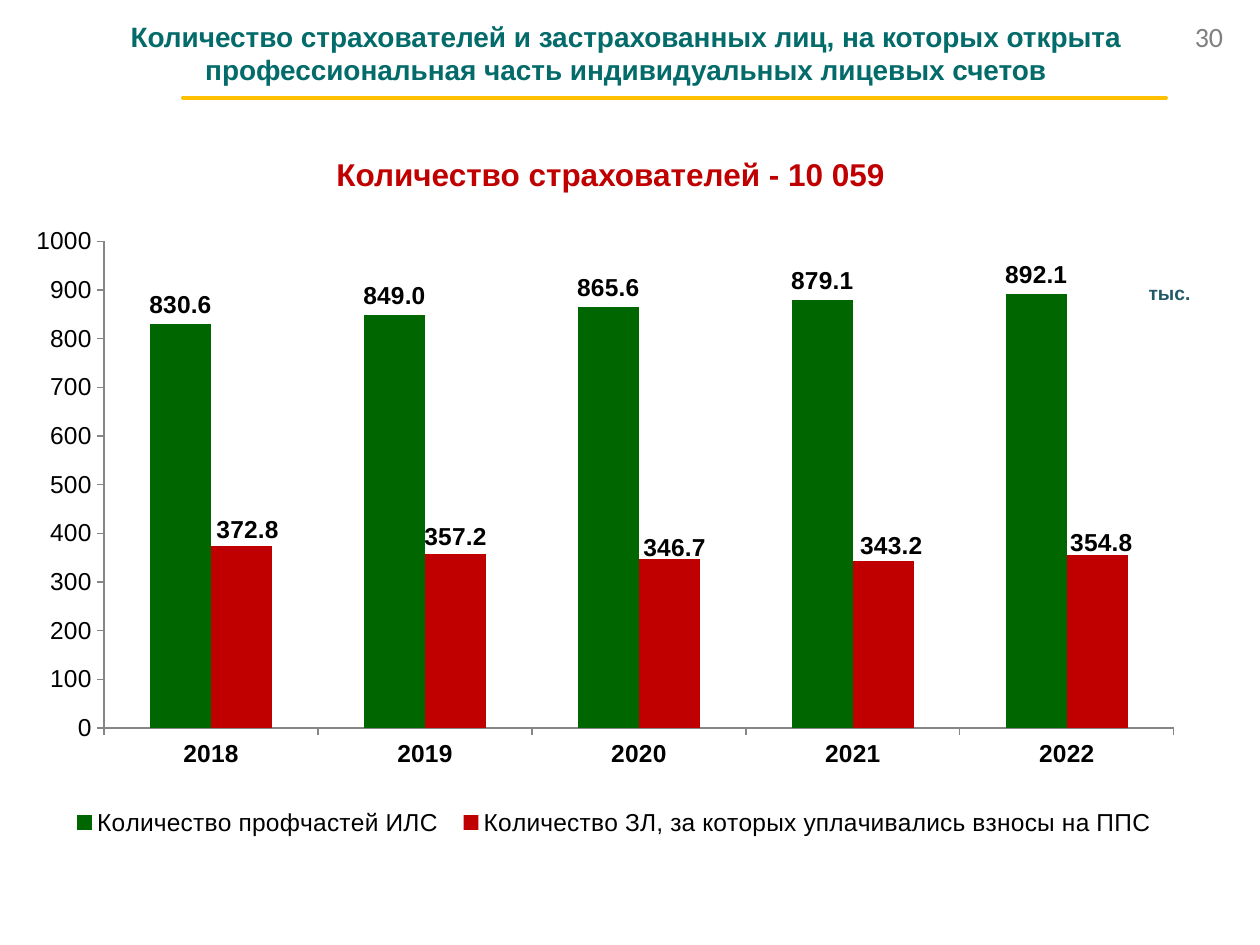
import pptx
import pptx.chart.data
import pptx.dml.color
import pptx.enum.chart
import pptx.enum.shapes
import pptx.enum.text
import pptx.oxml
import pptx.oxml.ns
import pptx.util

PX = 914400 // 126
CHART_BOX = (-3, 220, 1260, 648)
YEARS = ("2018", "2019", "2020", "2021", "2022")
SERIES = (
    ("Количество профчастей ИЛС", "006600", (830.6, 849.0, 865.6, 879.1, 892.1)),
    ("Количество ЗЛ, за которых уплачивались взносы на ППС", "C00000",
     (372.8, 357.2, 346.7, 343.2, 354.8)),
)
LABEL_SHIFTS = ((6, 2), (0, 2), (5, 8), (8, 4), (4, 6))


def scaled(box):
    """Turn pixel lengths into EMU."""
    return [length * PX for length in box]


def color(value):
    """Return the colour of a hex string."""
    return pptx.dml.color.RGBColor.from_string(value)


def style_font(font, size, value="000000", bold=False, name="Arial"):
    """Set the look of a font."""
    font.name, font.size, font.bold = name, pptx.util.Pt(size), bold
    font.color.rgb = color(value)


def add_text(page, box, lines, size, value, bold=True, name="Arial",
             align="CENTER", wrap=True):
    """Add a text box holding one paragraph of one or more lines."""
    frame = page.shapes.add_textbox(*scaled(box)).text_frame
    frame.word_wrap = wrap
    para = frame.paragraphs[0]
    para.alignment = getattr(pptx.enum.text.PP_ALIGN, align)
    style_font(para.font, size, value, bold, name)
    for index, line in enumerate(lines):
        if index:
            para.add_line_break()
        span = para.add_run()
        span.text = line
        style_font(span.font, size, value, bold, name)


def place(parent, index, **settings):
    """Give a chart part a manual layout."""
    for old in parent.findall(pptx.oxml.ns.qn("c:layout")):
        parent.remove(old)
    items = "".join(f'<c:{key} val="{value}"/>' for key, value in settings.items())
    parent.insert(index, pptx.oxml.parse_xml(
        f'<c:layout {pptx.oxml.ns.nsdecls("c")}><c:manualLayout>{items}'
        "</c:manualLayout></c:layout>"))


def style_axis(axis, bold=False):
    """Style an axis without gridlines."""
    axis.has_major_gridlines = False
    axis.major_tick_mark = pptx.enum.chart.XL_TICK_MARK.OUTSIDE
    axis.format.line.color.rgb = color("868686")
    style_font(axis.tick_labels.font, 14, bold=bold)


def shift_labels(series):
    """Move the label of each point off its usual place."""
    for index in range(len(LABEL_SHIFTS)):
        label = series.points[index].data_label
        style_font(label.font, 14, bold=True)
        label.position = pptx.enum.chart.XL_LABEL_POSITION.OUTSIDE_END
    labels = series._element.iter(pptx.oxml.ns.qn("c:dLbl"))
    for label, (right, down) in zip(list(labels), LABEL_SHIFTS):
        place(label, 1, x=round(right / CHART_BOX[2], 4), y=round(down / CHART_BOX[3], 4))


def add_column_chart(page):
    """Add the clustered column chart with its legend."""
    data = pptx.chart.data.CategoryChartData(number_format="0.0")
    data.categories = YEARS
    for name, _, values in SERIES:
        data.add_series(name, values)
    chart = page.shapes.add_chart(
        pptx.enum.chart.XL_CHART_TYPE.COLUMN_CLUSTERED, *scaled(CHART_BOX), data).chart
    style_font(chart.font, 18)
    chart.has_title = False
    style_axis(chart.category_axis, bold=True)
    style_axis(chart.value_axis)
    chart.value_axis.minimum_scale, chart.value_axis.maximum_scale = 0, 1000
    chart.value_axis.major_unit = 100
    chart.value_axis.tick_labels.number_format = "0"
    chart.value_axis.tick_labels.number_format_is_linked = False
    plot = chart.plots[0]
    plot.gap_width, plot.overlap, plot.vary_by_categories = 150, 0, False
    for series, (_, fill, _) in zip(plot.series, SERIES):
        series.format.fill.solid()
        series.format.fill.fore_color.rgb = color(fill)
        labels = series.data_labels
        labels.show_value = True
        labels.number_format, labels.number_format_is_linked = "0.0", False
        labels.position = pptx.enum.chart.XL_LABEL_POSITION.OUTSIDE_END
        style_font(labels.font, 14, bold=True)
    shift_labels(plot.series[1])
    chart.has_legend = True
    chart.legend.position = pptx.enum.chart.XL_LEGEND_POSITION.BOTTOM
    chart.legend.include_in_layout = False
    style_font(chart.legend.font, 14)
    place(chart.legend._element, 1, xMode="edge", yMode="edge", x=0.05, y=0.9, w=0.88, h=0.06)
    place(chart._chartSpace.chart.plotArea, 0, layoutTarget="inner", xMode="edge",
          yMode="edge", x=0.085, y=0.033, w=0.849, h=0.751)


def add_rule(page, box):
    """Add the thin yellow rule under the title."""
    rule = page.shapes.add_shape(pptx.enum.shapes.MSO_SHAPE.MATH_MINUS, *scaled(box))
    rule.shadow.inherit = False
    rule.fill.solid()
    rule.fill.fore_color.rgb = color("4F81BD")
    rule.line.color.rgb = color("FFC000")
    rule.line.width = pptx.util.Pt(2)


def main():
    """Build and save the slide."""
    deck = pptx.Presentation()
    deck.slide_width, deck.slide_height = scaled((1260, 945))
    page = deck.slides.add_slide(deck.slide_layouts[6])
    add_column_chart(page)
    add_text(page, (0, 13, 1260, 81),
             ("Количество страхователей и застрахованных лиц, на которых открыта ",
              "профессиональная часть индивидуальных лицевых счетов "), 16, "036B6A")
    add_text(page, (1135, 275, 68, 36), ("тыс.",), 11, "215968", align="RIGHT", wrap=False)
    add_text(page, (1168, 13, 82, 47), ("30",), 16, "808080", bold=False, name="Calibri")
    add_rule(page, (5, 95, 1339, 6))
    add_text(page, (154, 149, 922, 50), ("Количество страхователей - 10 059 ",), 18, "C00000")
    deck.save("out.pptx")


if __name__ == "__main__":
    main()
